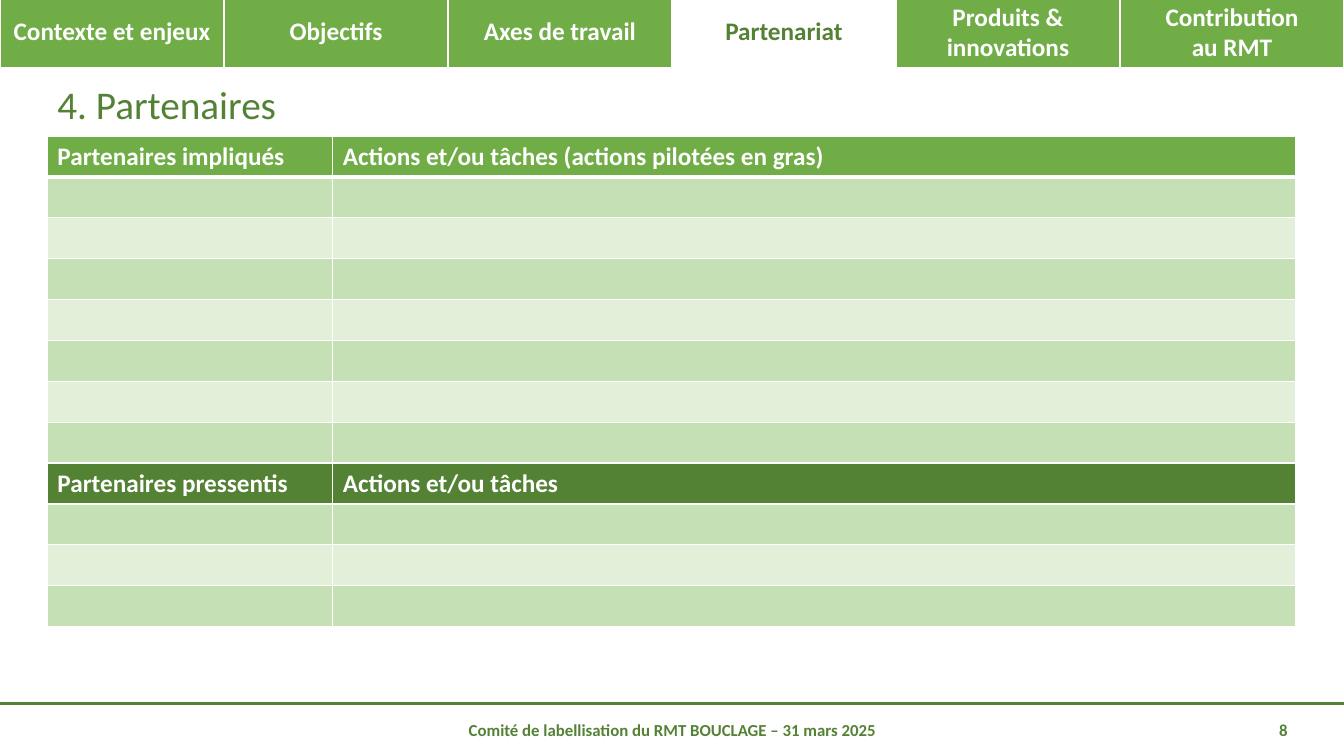
from lxml import etree
from pptx import Presentation
from pptx.dml.color import RGBColor
from pptx.enum.shapes import MSO_CONNECTOR
from pptx.enum.text import MSO_ANCHOR, PP_ALIGN
from pptx.oxml.ns import qn
from pptx.util import Inches, Pt

LEFT, CENTER, RIGHT = PP_ALIGN.LEFT, PP_ALIGN.CENTER, PP_ALIGN.RIGHT
TOP, MIDDLE = MSO_ANCHOR.TOP, MSO_ANCHOR.MIDDLE
STRAIGHT = MSO_CONNECTOR.STRAIGHT

# Content
TABS = ["Contexte et enjeux", "Objectifs", "Axes de travail", "Partenariat",
        "Produits & innovations", "Contribution\nau RMT"]
ACTIVE_TAB = "Partenariat"
TITLE = "4. Partenaires"
# Each section: headings, heading colour, number of empty rows
SECTIONS = [
    (("Partenaires impliqués", "Actions et/ou tâches (actions pilotées en gras)"), "green", 7),
    (("Partenaires pressentis", "Actions et/ou tâches"), "dark", 3),
]
FOOTER = "Comité de labellisation du RMT BOUCLAGE – 31 mars 2025"
PAGE_NUMBER = "8"

# Style and layout
COLORS = {"green": "70AD47", "dark": "548235", "band": "C5E0B4",
          "pale": "E2F0D9", "white": "FFFFFF"}
FONT = "Calibri"
WIDTH, HEIGHT = 13.33, 7.5
MARGIN = 0.47
CONTENT_WIDTH = 12.38
PARTNER_WIDTH = 2.83
ROW_HEIGHT = 4.87 / 12
TAB_TOP, TAB_HEIGHT = -0.03, 0.7
FOOTER_TOP = 6.98


def color(name):
    return RGBColor.from_string(COLORS[name])


def write(frame, text, size, color_name, align=LEFT, bold=True):
    paragraph = frame.paragraphs[0]
    paragraph.alignment = align
    for index, line in enumerate(text.split("\n")):
        if index:
            paragraph.add_line_break()
        run = paragraph.add_run()
        run.text = line
        run.font.name = FONT
        run.font.size = Pt(size)
        run.font.bold = bold
        run.font.color.rgb = color(color_name)
    return paragraph


def add_text(slide, box, text, size, align=LEFT, bold=True):
    shape = slide.shapes.add_textbox(*(Inches(length) for length in box))
    frame = shape.text_frame
    frame.word_wrap = True
    frame.vertical_anchor = MIDDLE
    return write(frame, text, size, "dark", align, bold)


def add_grid(slide, left, top, widths, row_count, row_height):
    frame = slide.shapes.add_table(row_count, len(widths), Inches(left), Inches(top),
                                   Inches(sum(widths)), Inches(row_height * row_count))
    table = frame.table
    table.first_row = table.horz_banding = False
    for column, width in zip(table.columns, widths):
        column.width = Inches(width)
    return table


def style_cell(cell, fill, top_line=1, bottom_line=1, anchor=TOP):
    cell.vertical_anchor = anchor
    if fill:
        cell.fill.solid()
        cell.fill.fore_color.rgb = color(fill)
    else:
        cell.fill.background()
    properties = cell._tc.get_or_add_tcPr()
    borders = [("a:lnL", 1), ("a:lnR", 1), ("a:lnT", top_line), ("a:lnB", bottom_line)]
    for position, (tag, points) in enumerate(borders):
        line = etree.Element(qn(tag), w=str(Pt(points)))
        solid = etree.SubElement(line, qn("a:solidFill"))
        etree.SubElement(solid, qn("a:srgbClr"), val=COLORS["white"])
        properties.insert(position, line)


def add_partner_table(slide):
    rows = []
    for headings, fill, empty_count in SECTIONS:
        rows.append((headings, fill))
        rows += [(("", ""), "pale" if index % 2 else "band") for index in range(empty_count)]
    widths = [PARTNER_WIDTH, CONTENT_WIDTH - PARTNER_WIDTH]
    table = add_grid(slide, MARGIN, 1.35, widths, len(rows), ROW_HEIGHT)
    for row_index, (texts, fill) in enumerate(rows):
        for column_index, text in enumerate(texts):
            cell = table.cell(row_index, column_index)
            style_cell(cell, fill, top_line=3 if row_index == 1 else 1,
                       bottom_line=3 if row_index == 0 else 1)
            if text:
                write(cell.text_frame, text, 18, "white")


def add_tabs(slide):
    widths = [WIDTH / len(TABS)] * len(TABS)
    table = add_grid(slide, 0, TAB_TOP, widths, 1, TAB_HEIGHT)
    for index, tab in enumerate(TABS):
        active = tab == ACTIVE_TAB
        cell = table.cell(0, index)
        style_cell(cell, None if active else "green", anchor=MIDDLE)
        write(cell.text_frame, tab, 18, "dark" if active else "white", CENTER)


def add_footer(slide):
    rule = slide.shapes.add_connector(STRAIGHT, 0, Inches(FOOTER_TOP),
                                      Inches(WIDTH), Inches(FOOTER_TOP))
    rule.line.color.rgb = color("dark")
    rule.line.width = Pt(2)
    etree.SubElement(rule._element.spPr, qn("a:effectLst"))
    height = HEIGHT - FOOTER_TOP
    add_text(slide, (1.91, FOOTER_TOP, 9.52, height), FOOTER, 12, CENTER)
    add_text(slide, (12.17, FOOTER_TOP, 0.7, height), PAGE_NUMBER, 12, RIGHT)


def main():
    presentation = Presentation()
    presentation.slide_width = Inches(WIDTH)
    presentation.slide_height = Inches(HEIGHT)
    slide = presentation.slides.add_slide(presentation.slide_layouts[6])
    add_footer(slide)
    title = add_text(slide, (MARGIN, 0.78, CONTENT_WIDTH, 0.55), TITLE, 28, bold=False)
    title.line_spacing = 0.9
    add_partner_table(slide)
    add_tabs(slide)
    presentation.save("out.pptx")


if __name__ == "__main__":
    main()
